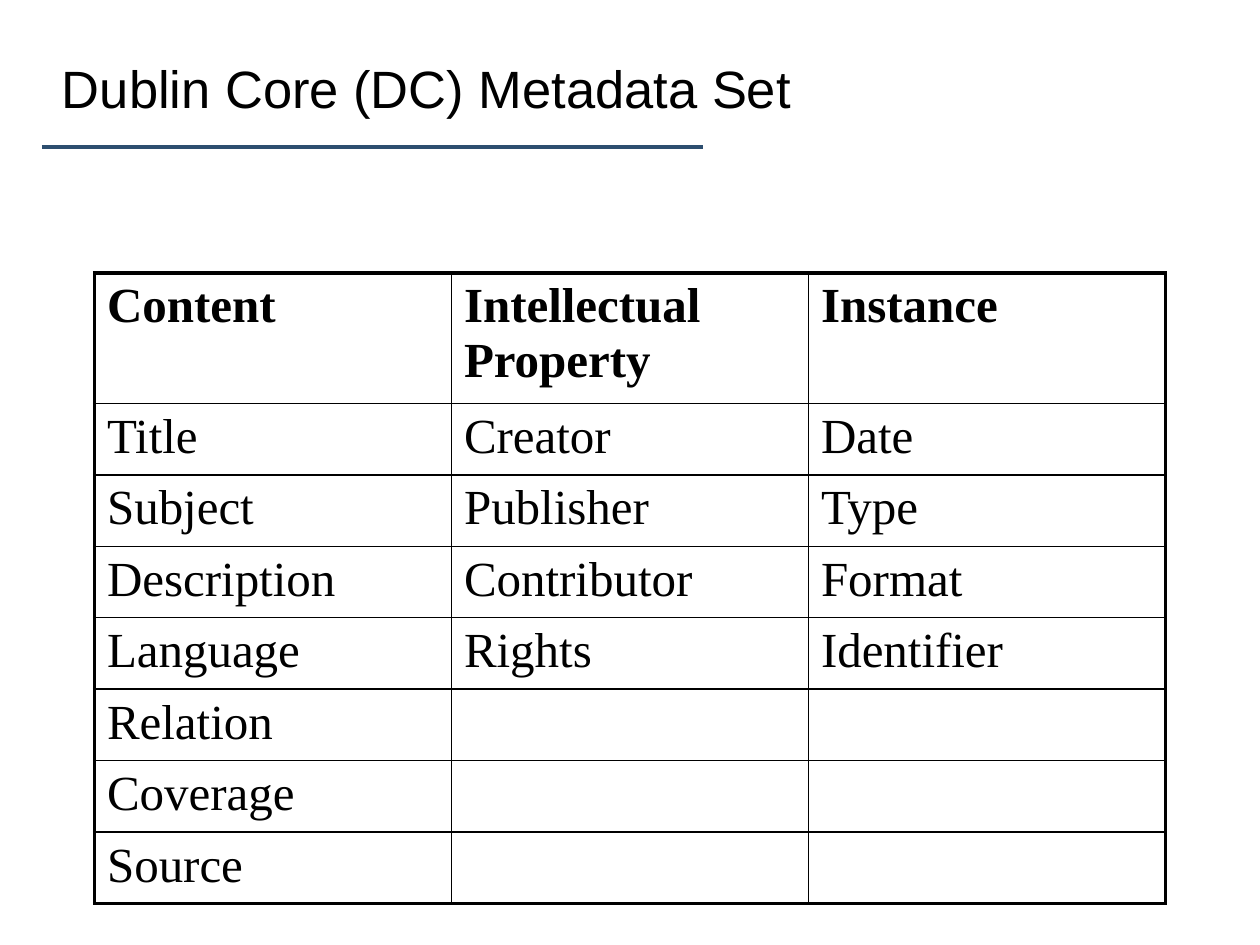
"""Build the Dublin Core metadata set slide."""
from lxml import etree
from pptx import Presentation
from pptx.dml.color import RGBColor
from pptx.enum.shapes import MSO_CONNECTOR
from pptx.enum.text import MSO_ANCHOR
from pptx.oxml import parse_xml
from pptx.oxml.ns import nsdecls, qn
from pptx.util import Emu, Pt

STRAIGHT = MSO_CONNECTOR.STRAIGHT
MIDDLE = MSO_ANCHOR.MIDDLE

TITLE = "Dublin Core (DC) Metadata Set"
COLUMNS = {
    "Content": ["Title", "Subject", "Description", "Language",
                "Relation", "Coverage", "Source"],
    "Intellectual Property": ["Creator", "Publisher", "Contributor", "Rights"],
    "Instance": ["Date", "Type", "Format", "Identifier"],
}

BLACK, RULE_BLUE = "000000", "2D4E6F"
TITLE_FONT = {"name": "Arial", "size": Pt(30), "bold": False}
HEAD_FONT = {"name": "Times New Roman", "size": Pt(28), "bold": True}
BODY_FONT = {**HEAD_FONT, "bold": False}
THIN, THICK = Pt(1), Pt(2.25)

SLIDE = (1260, 945)
RULE = (42, 147, 703, 147)
TITLE_BOX = (62, 9, 1071, 157)
TITLE_FRAME = {"margin_left": 0, "word_wrap": True, "vertical_anchor": MIDDLE}
TABLE_TOP, TABLE_H, ROWS_H = 273, 630, 567
COL_W = 357


def px(n):
    """Convert px to EMU."""
    return Emu(round(n * 914400 / 126))


def color(value):
    """Turn a hex string into a colour."""
    return RGBColor.from_string(value)


def apply(obj, values):
    """Set attributes from a dict."""
    for name, value in values.items():
        setattr(obj, name, value)


def write(tf, text, font):
    """Put one formatted run into a text frame."""
    r = tf.paragraphs[0].add_run()
    r.text = text
    apply(r.font, font)
    r.font.color.rgb = color(BLACK)


def set_borders(cell, outer):
    """Draw cell borders, thick on the outer edges of the table."""
    tc_pr = cell._tc.get_or_add_tcPr()
    for i, side in enumerate("LRTB"):
        width = THICK if outer[side] else THIN
        tc_pr.insert(i, parse_xml(
            f'<a:ln{side} {nsdecls("a")} w="{width}"><a:solidFill>'
            f'<a:srgbClr val="{BLACK}"/></a:solidFill></a:ln{side}>'))


def add_title(s):
    """Add the title and the rule below it."""
    line = s.shapes.add_connector(STRAIGHT, *map(px, RULE))
    line.line.color.rgb = color(RULE_BLUE)
    line.line.width = THICK
    etree.SubElement(line._element.spPr, qn("a:effectLst"))
    tf = s.shapes.add_textbox(*map(px, TITLE_BOX)).text_frame
    apply(tf, TITLE_FRAME)
    write(tf, TITLE, TITLE_FONT)


def add_elements_table(s):
    """Add the centred table of metadata elements."""
    n_cols = len(COLUMNS)
    n_rows = 1 + max(map(len, COLUMNS.values()))
    width = n_cols * COL_W
    frame = s.shapes.add_table(
        n_rows, n_cols, px((SLIDE[0] - width) / 2), px(TABLE_TOP),
        px(width), px(ROWS_H))
    frame.height = px(TABLE_H)
    table = frame.table
    apply(table, {"first_row": False, "horz_banding": False})
    for j, (head, names) in enumerate(COLUMNS.items()):
        texts = [head] + names
        for i in range(n_rows):
            cell = table.cell(i, j)
            cell.fill.background()
            set_borders(cell, {"L": j == 0, "R": j == n_cols - 1,
                               "T": i == 0, "B": i == n_rows - 1})
            if i < len(texts):
                write(cell.text_frame, texts[i], BODY_FONT if i else HEAD_FONT)


def main():
    """Build and save the slide."""
    prs = Presentation()
    prs.slide_width, prs.slide_height = map(px, SLIDE)
    s = prs.slides.add_slide(prs.slide_layouts[6])
    add_title(s)
    add_elements_table(s)
    prs.save("out.pptx")


if __name__ == "__main__":
    main()
